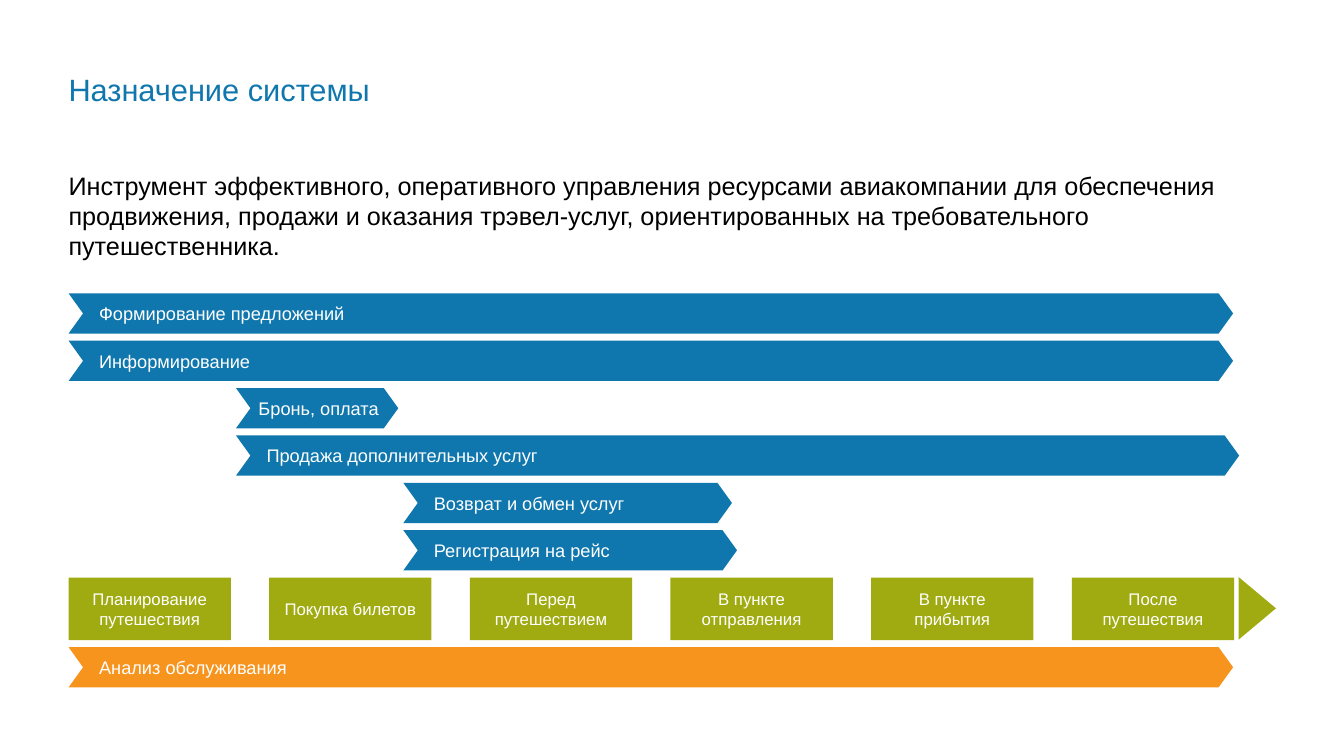
from pptx import Presentation
from pptx.dml.color import RGBColor
from pptx.enum.shapes import MSO_SHAPE
from pptx.enum.text import MSO_ANCHOR, PP_ALIGN
from pptx.util import Pt

PX = 9144
FONT = "Arial"
CHEVRON = MSO_SHAPE.CHEVRON
RECTANGLE = MSO_SHAPE.RECTANGLE
TRIANGLE = MSO_SHAPE.ISOSCELES_TRIANGLE
TOP, MIDDLE = MSO_ANCHOR.TOP, MSO_ANCHOR.MIDDLE
LEFT, CENTER = PP_ALIGN.LEFT, PP_ALIGN.CENTER

COLORS = {
    "blue": "0F77AD",
    "green": "9FAB10",
    "orange": "F7941E",
    "black": "000000",
    "white": "FFFFFF",
}

MARGIN = 68
FULL_W = 1155
BAR_TOP, BAR_H, BAR_PITCH = 291, 40, 47
BAR_INDENT = 166
STAGE_TOP, STAGE_W, STAGE_H, STAGE_PITCH = 573, 161, 62, 199
ANALYSIS_TOP = 642

PROCESSES = [
    ("Формирование предложений", 0, FULL_W),
    ("Информирование", 0, FULL_W),
    ("Бронь, оплата", 1, 161),
    ("Продажа дополнительных услуг", 1, 995),
    ("Возврат и обмен услуг", 2, 326),
    ("Регистрация на рейс", 2, 331),
]
STAGES = [
    "Планирование путешествия",
    "Покупка билетов",
    "Перед путешествием",
    "В пункте отправления",
    "В пункте прибытия",
    "После путешествия",
]


def px(*values):
    return [value * PX for value in values]


def rgb(name):
    return RGBColor.from_string(COLORS[name])


def write(sp, text, size, color, insets, anchor=MIDDLE, align=LEFT):
    tf = sp.text_frame
    tf.word_wrap = True
    tf.vertical_anchor = anchor
    tf.margin_left, tf.margin_top, tf.margin_right, tf.margin_bottom = px(*insets)
    p = tf.paragraphs[0]
    p.alignment = align
    r = p.add_run()
    r.text = text
    r.font.name = FONT
    r.font.size = Pt(size)
    r.font.color.rgb = rgb(color)


def add_text(s, text, box, size, color, insets):
    sp = s.shapes.add_textbox(*px(*box))
    write(sp, text, size, color, insets, TOP)


def add_block(s, kind, box, color):
    sp = s.shapes.add_shape(kind, *px(*box))
    sp.shadow.inherit = False
    sp.fill.solid()
    sp.fill.fore_color.rgb = rgb(color)
    sp.line.fill.background()
    return sp


def add_bar(s, text, left, top, width, color, insets=(16, 4, 16, 4)):
    sp = add_block(s, CHEVRON, (left, top, width, BAR_H), color)
    sp.adjustments[0] = 0.36
    write(sp, text, 13, "white", insets)


def add_stage(s, text, left):
    sp = add_block(s, RECTANGLE, (left, STAGE_TOP, STAGE_W, STAGE_H), "green")
    write(sp, text, 12, "white", (10, 5, 10, 5), align=CENTER)


def main():
    prs = Presentation()
    prs.slide_width, prs.slide_height = px(1333, 750)
    s = prs.slides.add_slide(prs.slide_layouts[6])

    add_text(s, "Назначение системы", (MARGIN, 70, 784, 105), 22, "blue", (0, 0, 0, 0))
    add_text(
        s,
        "Инструмент эффективного, оперативного управления ресурсами авиакомпании "
        "для обеспечения продвижения, продажи и оказания трэвел-услуг, "
        "ориентированных на требовательного путешественника.",
        (MARGIN, 164, 1197, 101), 18, "black", (0, 5, 0, 5),
    )

    for row, (text, step, width) in enumerate(PROCESSES):
        insets = (8, 4, 0, 4) if width == STAGE_W else (16, 4, 16, 4)
        add_bar(s, text, MARGIN + step * BAR_INDENT, BAR_TOP + row * BAR_PITCH,
                width, "blue", insets)

    for column, text in enumerate(STAGES):
        add_stage(s, text, MARGIN + column * STAGE_PITCH)

    arrow = add_block(s, TRIANGLE, (1216, 585, STAGE_H, 37), "green")
    arrow.rotation = 90

    add_bar(s, "Анализ обслуживания", MARGIN, ANALYSIS_TOP, FULL_W, "orange")
    prs.save("out.pptx")


if __name__ == "__main__":
    main()
